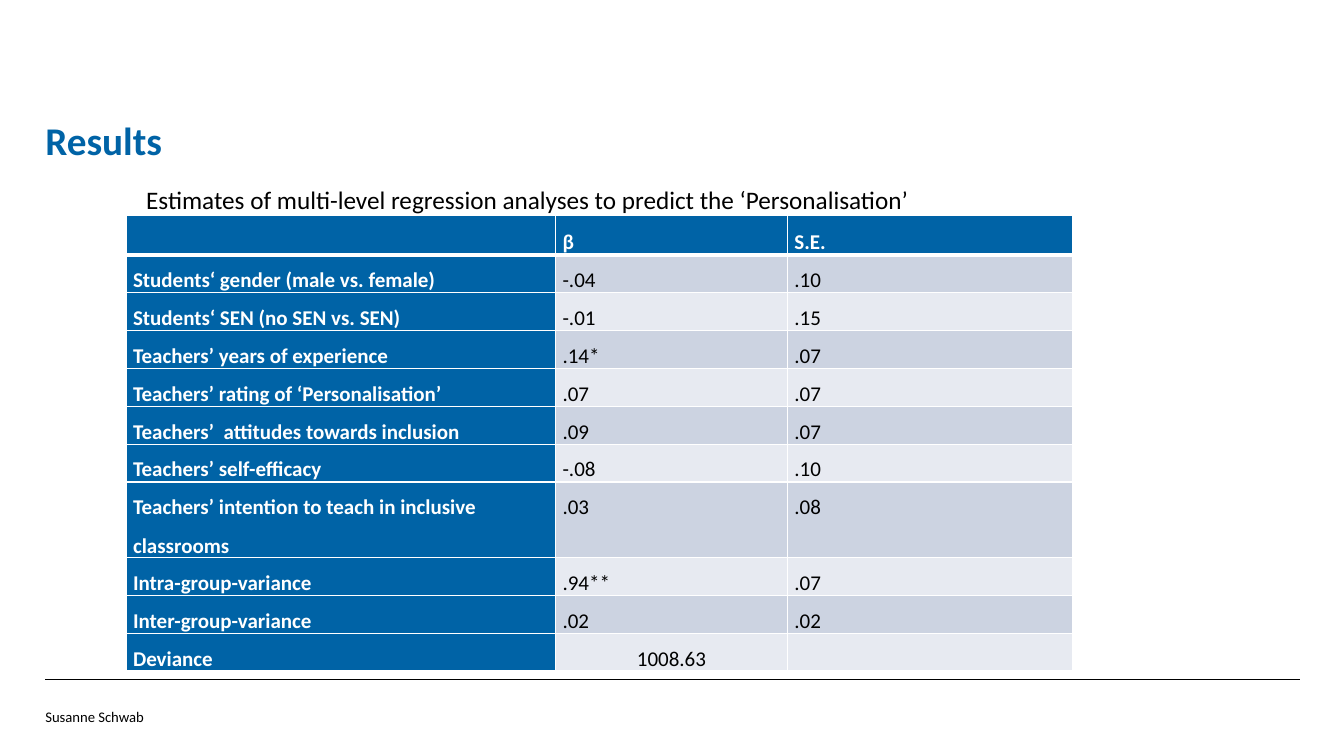
from lxml.etree import SubElement
from pptx import Presentation
from pptx.dml.color import RGBColor
from pptx.enum.shapes import MSO_CONNECTOR as Connector
from pptx.enum.text import MSO_ANCHOR as Anchor, PP_ALIGN as Align
from pptx.oxml.ns import qn
from pptx.util import Emu, Pt

BLUE = RGBColor(0x00, 0x63, 0xA6)
BLACK = RGBColor(0x00, 0x00, 0x00)
WHITE = RGBColor(0xFF, 0xFF, 0xFF)
BAND_DARK = RGBColor(0xCC, 0xD3, 0xE1)
BAND_LIGHT = RGBColor(0xE7, 0xEA, 0xF1)

SLIDE_WIDTH, SLIDE_HEIGHT = 1333, 750
LEFT, CONTENT_WIDTH = 45, 1244
COLUMN_WIDTHS = [426, 230, 283]
ROW_HEIGHTS = [39, 35, 31, 31, 35, 35, 31, 65, 31, 31, 31]

ESTIMATES = [
    ("", "β", "S.E."),
    ("Students‘ gender (male vs. female)", "-.04", ".10"),
    ("Students‘ SEN (no SEN vs. SEN)", "-.01", ".15"),
    ("Teachers’ years of experience", ".14*", ".07"),
    ("Teachers’ rating of ‘Personalisation’", ".07", ".07"),
    ("Teachers’  attitudes towards inclusion", ".09", ".07"),
    ("Teachers’ self-efficacy", "-.08", ".10"),
    ("Teachers’ intention to teach in inclusive classrooms", ".03", ".08"),
    ("Intra-group-variance", ".94**", ".07"),
    ("Inter-group-variance", ".02", ".02"),
    ("Deviance", "1008.63", ""),
]


def px(length):
    """One px is a hundredth of an inch."""
    return Emu(length * 9144)


def apply(target, values):
    for name, value in values.items():
        setattr(target, name, value)


class SlideBuilder:
    font_name = "Calibri"

    def __init__(self, presentation):
        self.slide = presentation.slides.add_slide(presentation.slide_layouts[5])
        self.shapes = self.slide.shapes

    def add_run(self, paragraph, text, size, color=BLACK, bold=False):
        run = paragraph.add_run()
        run.text = text
        apply(run.font, {"name": self.font_name, "size": Pt(size), "bold": bold})
        run.font.color.rgb = color

    def frame(self, shape, anchor):
        apply(shape.text_frame, {
            "margin_left": 0, "margin_top": 0, "margin_right": 0, "margin_bottom": 0,
            "word_wrap": True, "vertical_anchor": anchor})
        return shape.text_frame.paragraphs[0]

    def title(self, text, left, top, width, height):
        shape = self.shapes.title
        apply(shape, {"left": px(left), "top": px(top),
                      "width": px(width), "height": px(height)})
        paragraph = self.frame(shape, Anchor.BOTTOM)
        apply(paragraph, {"alignment": Align.LEFT, "line_spacing": 0.9})
        self.add_run(paragraph, text, 28, BLUE, True)

    def text(self, runs, left, top, width, height, tab=None):
        shape = self.shapes.add_textbox(px(left), px(top), px(width), px(height))
        paragraph = self.frame(shape, Anchor.TOP)
        if tab:
            tabs = SubElement(paragraph._p.get_or_add_pPr(), qn("a:tabLst"))
            SubElement(tabs, qn("a:tab"), pos=str(px(tab)), algn="l")
        for text, size in runs:
            self.add_run(paragraph, text, size)

    def rule(self, left, top, width):
        line = self.shapes.add_connector(
            Connector.STRAIGHT, px(left), px(top), px(left + width), px(top))
        line.line.color.rgb = BLACK
        line.line.width = Pt(0.75)
        SubElement(line._element.spPr, qn("a:effectLst"))

    def borders(self, cell, widths):
        properties = cell._tc.get_or_add_tcPr()
        for side, width in widths.items():
            border = SubElement(properties, qn(f"a:ln{side}"), w=str(Pt(width)))
            fill = SubElement(border, qn("a:solidFill"))
            SubElement(fill, qn("a:srgbClr"), val=str(WHITE))

    def cell(self, cell, text, row, column):
        # The line under the header is thicker than the rest
        self.borders(cell, {"L": 1, "R": 1, "T": 3 if row == 1 else 1,
                            "B": 3 if row == 0 else 1})
        heading = row == 0 or column == 0
        cell.fill.solid()
        cell.fill.fore_color.rgb = (
            BLUE if heading else BAND_DARK if row % 2 else BAND_LIGHT)
        apply(cell, {"margin_left": px(7), "margin_right": px(7),
                     "margin_top": 0, "margin_bottom": 0,
                     "vertical_anchor": Anchor.TOP if row else Anchor.BOTTOM})
        if text:
            paragraph = cell.text_frame.paragraphs[0]
            apply(paragraph, {
                "line_spacing": 1.5,
                "alignment": Align.CENTER if text == "1008.63" else Align.LEFT})
            self.add_run(paragraph, text, 15, WHITE if heading else BLACK, heading)

    def table(self, rows, left, top):
        table = self.shapes.add_table(
            len(rows), len(COLUMN_WIDTHS), px(left), px(top),
            px(sum(COLUMN_WIDTHS)), px(sum(ROW_HEIGHTS))).table
        apply(table, {"first_col": True, "horz_banding": False})
        for column, width in zip(table.columns, COLUMN_WIDTHS):
            column.width = px(width)
        for row, height in zip(table.rows, ROW_HEIGHTS):
            row.height = px(height)
        for row, texts in enumerate(rows):
            for column, text in enumerate(texts):
                self.cell(table.cell(row, column), text, row, column)


def main():
    presentation = Presentation()
    apply(presentation, {"slide_width": px(SLIDE_WIDTH),
                         "slide_height": px(SLIDE_HEIGHT)})
    builder = SlideBuilder(presentation)

    # Footer rule, behind the table
    builder.rule(LEFT, 674, CONTENT_WIDTH)

    # Caption, footer and title
    caption = "Estimates of multi-level regression analyses to predict the ‘Personalisation’"
    builder.text([("\t", 22), (caption, 18)], LEFT, 177, CONTENT_WIDTH, 473, tab=100)
    builder.text([("Susanne Schwab", 10.5)], LEFT, 702, 853, 40)
    builder.title("Results", LEFT, 73, 933, 90)

    # Regression estimates
    builder.table(ESTIMATES, 125, 214)
    presentation.save("out.pptx")


if __name__ == "__main__":
    main()
